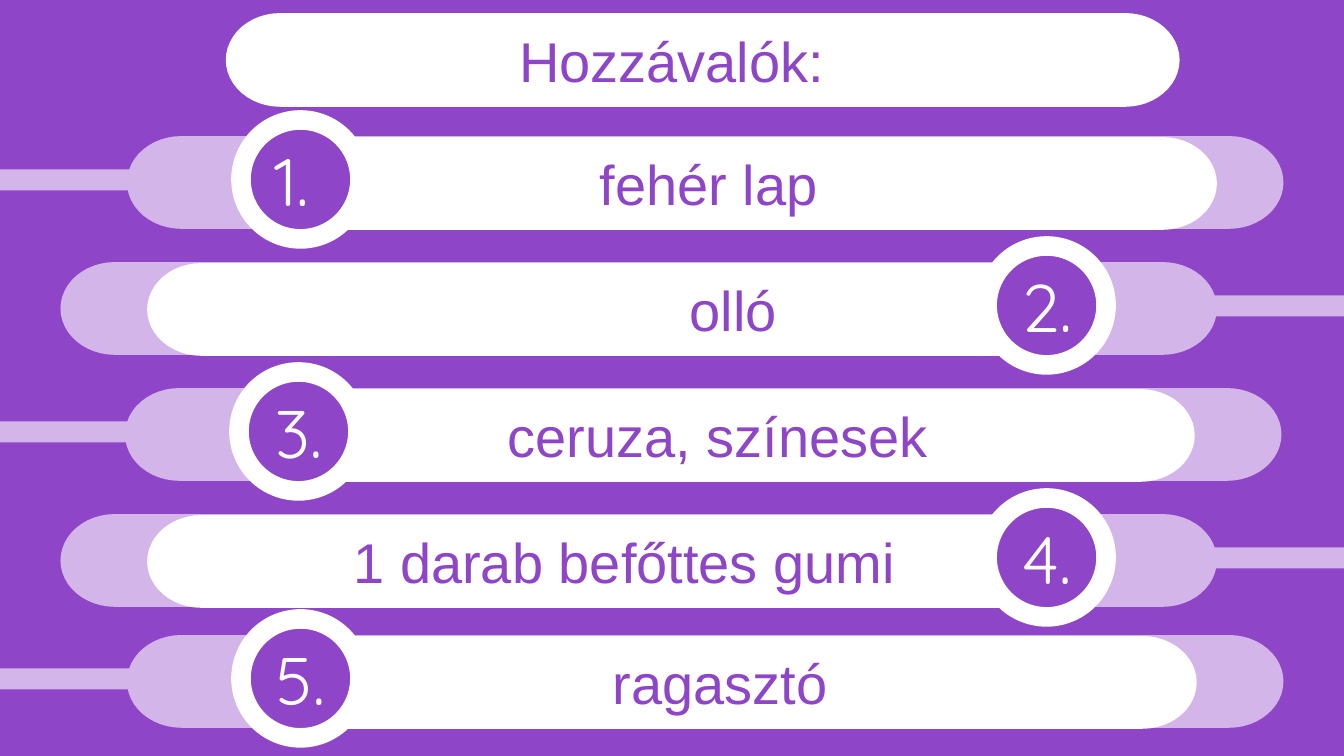
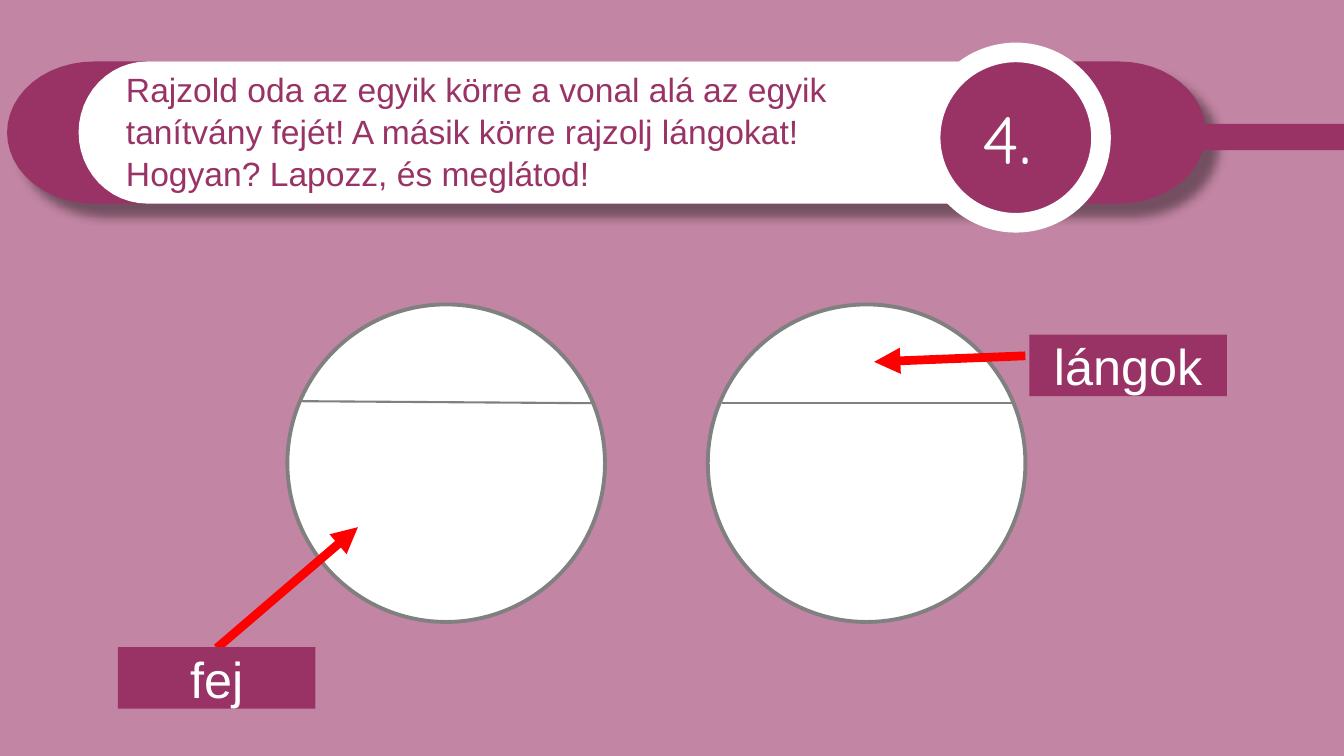
from math import cos, pi, sin

from lxml.etree import SubElement as sub
from pptx import Presentation
from pptx.dml.color import RGBColor
from pptx.enum.shapes import MSO_CONNECTOR as LINK, MSO_SHAPE as KIND
from pptx.enum.text import MSO_ANCHOR as ANCHOR, PP_ALIGN as ALIGN
from pptx.oxml.ns import qn
from pptx.util import Inches, Pt

WIDE, HIGH = 13.33, 7.5
WHITE = RGBColor(0xFF, 0xFF, 0xFF)
VIOLET = RGBColor(0x8F, 0x45, 0xC7)
LILAC = RGBColor(0xD3, 0xB5, 0xE9)
PLUM = RGBColor(0x99, 0x33, 0x66)
ROSE = RGBColor(0xC2, 0x85, 0xA3)
GRAY = RGBColor(0x80, 0x80, 0x80)
RED = RGBColor(0xFF, 0x00, 0x00)
STEPS = 24

ROWS = [
    (1.35, 1.26, 2.61, "fehér lap", -0.62),
    (2.6, 0.6, 1.46, "olló", 2.16),
    (3.85, 1.24, 2.39, "ceruza, színesek", 0),
    (5.1, 0.6, 1.46, "1 darab befőttes gumi", 0),
    (6.3, 1.26, 2.41, "ragasztó", 0),
]
TASK = [
    "Rajzold oda az egyik körre a vonal alá az egyik",
    "tanítvány fejét! A másik körre rajzolj lángokat!",
    "Hogyan? Lapozz, és meglátod!",
]


def add_page(deck, color):
    page = deck.slides.add_slide(deck.slide_layouts[6])
    fill = page.background.fill
    fill.solid()
    fill.fore_color.rgb = color
    return page


def paint(shape, color, edge=None, weight=0):
    shape.shadow.inherit = False
    shape.fill.solid()
    shape.fill.fore_color.rgb = color
    if edge is None:
        shape.line.fill.background()
    else:
        shape.line.color.rgb = edge
        shape.line.width = Pt(weight)
    return shape


def add_form(page, kind, box, color, edge=None, weight=0):
    shape = page.shapes.add_shape(kind, *map(Inches, box))
    return paint(shape, color, edge, weight)


def add_pill(page, box, bend, color):
    left, top, width, height = box
    half = height / 2
    right = left + width
    points = []
    for hub, start in ((right - bend, -pi / 2), (left + bend, pi / 2)):
        for step in range(STEPS + 1):
            turn = start + pi * step / STEPS
            points.append((Inches(hub + bend * cos(turn)),
                           Inches(top + half + half * sin(turn))))
    maker = page.shapes.build_freeform(*points[0])
    maker.add_line_segments(points[1:])
    return paint(maker.convert_to_shape(), color)


def write(shape, lines, size, color, font="Arial", align=ALIGN.CENTER,
          anchor=ANCHOR.MIDDLE, left=0.1, right=0.1, pitch=None):
    frame = shape.text_frame
    frame.word_wrap = True
    frame.vertical_anchor = anchor
    frame.margin_left, frame.margin_right = Inches(left), Inches(right)
    for spot, line in enumerate(lines):
        para = frame.add_paragraph() if spot else frame.paragraphs[0]
        para.alignment = align
        if pitch:
            para.line_spacing = pitch
        run = para.add_run()
        run.text = line
        run.font.size = Pt(size)
        run.font.name = font
        run.font.color.rgb = color


def add_bar(page, box, text, shift=0):
    pill = add_pill(page, box, 0.54, WHITE)
    write(pill, [text], 40, VIOLET,
          left=0.1 + max(shift, 0), right=0.1 + max(-shift, 0))


def add_badge(page, left, top, size, number, color):
    badge = add_form(page, KIND.OVAL, (left, top, size, size), color, WHITE, 14)
    write(badge, [f"{number}. "], 48, WHITE, "Quicksand")


def add_line(page, start, end, color, weight, arrow=False):
    line = page.shapes.add_connector(
        LINK.STRAIGHT, *map(Inches, (*start, *end)))
    line.line.color.rgb = color
    line.line.width = Pt(weight)
    props = line.element.spPr
    if arrow:
        sub(props.find(qn("a:ln")), qn("a:tailEnd"), type="triangle")
    sub(props, qn("a:effectLst"))


def add_shade(shape):
    effect = shape.element.spPr.find(qn("a:effectLst"))
    shade = sub(effect, qn("a:outerShdw"), blurRad=str(Pt(7)),
                dist=str(Pt(12)), dir=str(45 * 60000), algn="tl",
                rotWithShape="0")
    tint = sub(shade, qn("a:srgbClr"), val="000000")
    sub(tint, qn("a:alpha"), val="40000")


def add_row(page, number, row):
    top, back, front, text, shift = row
    odd = number % 2
    stem = 0 if odd else WIDE - 1.54
    add_form(page, KIND.RECTANGLE, (stem, top + 0.33, 1.54, 0.21), LILAC)
    add_pill(page, (back, top, 11.47, 0.92), 0.54, LILAC)
    add_bar(page, (front, top + 0.01, 9.46, 0.92), text, shift)
    spot = back + (1.13 if odd else 9.19)
    add_badge(page, spot, top - 0.16, 1.18, number, VIOLET)


def add_disc(page, left, start, end):
    add_form(page, KIND.OVAL, (left, 3.02, 3.15, 3.15), WHITE, GRAY, 2.75)
    add_line(page, start, end, GRAY, 1.5)


def add_label(page, left, top, text, start, end):
    add_line(page, start, end, RED, 6.25, True)
    label = add_form(page, KIND.RECTANGLE, (left, top, 1.96, 0.61), PLUM)
    write(label, [text], 36, WHITE)


def add_list(deck):
    page = add_page(deck, VIOLET)
    for number, row in enumerate(ROWS, 1):
        add_row(page, number, row)
    add_bar(page, (2.24, 0.13, 9.46, 0.93), "Hozzávalók:", -0.62)


def add_task(deck):
    page = add_page(deck, ROSE)
    add_disc(page, 2.85, (2.98, 3.98), (5.89, 4))
    add_disc(page, 7.02, (7.16, 4), (10.05, 4))
    add_label(page, 1.17, 6.42, "fej", (2.15, 6.43), (3.55, 5.23))
    add_label(page, 10.21, 3.32, "lángok", (10.17, 3.53), (8.67, 3.59))
    add_shade(add_pill(page, (0.07, 0.61, 11.89, 1.41), 0.86, PLUM))
    panel = add_pill(page, (0.78, 0.61, 9.94, 1.41), 0.68, WHITE)
    write(panel, TASK, 24, PLUM, align=ALIGN.LEFT, anchor=ANCHOR.TOP,
          left=0.47, pitch=1.05)
    add_badge(page, 9.23, 0.52, 1.69, 4, PLUM)
    add_form(page, KIND.RECTANGLE, (11.29, 1.23, 2.04, 0.26), PLUM)


def main():
    deck = Presentation()
    deck.slide_width, deck.slide_height = Inches(WIDE), Inches(HIGH)
    add_list(deck)
    add_task(deck)
    deck.save("out.pptx")


if __name__ == "__main__":
    main()
